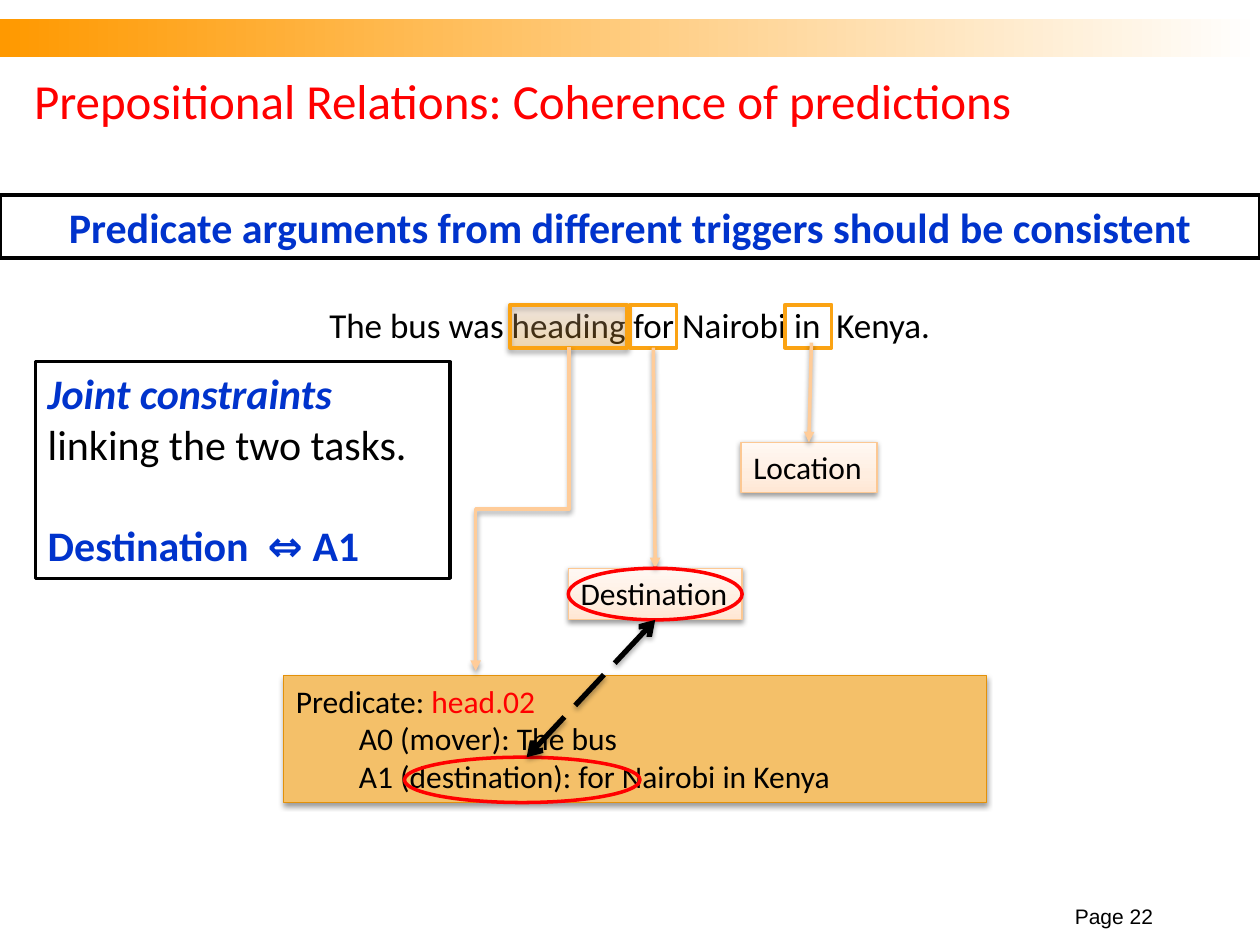
from dataclasses import dataclass
from typing import Optional

from lxml.etree import SubElement
from pptx import Presentation
from pptx.dml.color import RGBColor
from pptx.enum.dml import MSO_LINE_DASH_STYLE as Dash
from pptx.enum.shapes import MSO_CONNECTOR as Conn, MSO_SHAPE as Geo
from pptx.enum.text import MSO_ANCHOR as Anchor, PP_ALIGN as Align
from pptx.oxml.ns import qn
from pptx.util import Inches, Pt


@dataclass(frozen=True)
class Theme:
    font: str = "Calibri"
    footer_font: str = "Arial"
    black: str = "000000"
    white: str = "FFFFFF"
    red: str = "FF0000"
    blue: str = "0033CC"
    amber: str = "FBA313"
    peach: str = "FFCC99"
    role_line: str = "FCC893"
    frame_fill: str = "F4C069"
    frame_line: str = "E3910A"
    bar: tuple = ((0, "FF9900"), (100, "FFFFFF"))
    verb: tuple = ((0, "FFA40F"), (100, "FFD7BB"))
    role: tuple = ((0, "FFE7D4"), (35, "FFEEE0"), (100, "FFF8F3"))
    title: int = 28
    claim: int = 24
    sentence: int = 20
    label: int = 18
    footer: int = 12


@dataclass(frozen=True)
class Cell:
    col: float
    row: float
    cols: float
    rows: float


@dataclass(frozen=True)
class Span:
    text: str
    color: str = "000000"
    bold: bool = False
    italic: bool = False


@dataclass(frozen=True)
class Shadow:
    alpha: int
    distance: float


T = Theme()
SOFT, STRONG = Shadow(38, 1.6), Shadow(35, 1.8)
COLUMNS, ROWS = 100, 75
prs = Presentation()
prs.slide_width, prs.slide_height = Inches(10), Inches(7.5)


def x(col: float) -> int:
    return round(prs.slide_width * col / COLUMNS)


def y(row: float) -> int:
    return round(prs.slide_height * row / ROWS)


def frame(cell: Cell) -> tuple:
    return x(cell.col), y(cell.row), x(cell.cols), y(cell.rows)


def color_node(parent, color: str, alpha: int) -> None:
    node = SubElement(parent, qn("a:srgbClr"), val=color)
    if alpha < 100:
        SubElement(node, qn("a:alpha"), val=str(alpha * 1000))


def set_shadow(sp, shadow: Optional[Shadow]) -> None:
    effects = SubElement(sp._element.spPr, qn("a:effectLst"))
    if shadow:
        outer = SubElement(effects, qn("a:outerShdw"), blurRad=str(Pt(3.1)),
                           dist=str(Pt(shadow.distance)), dir="5400000", rotWithShape="0")
        color_node(outer, T.black, shadow.alpha)


def set_gradient(sp, stops: tuple, angle: int, alpha: int) -> None:
    sp.fill.gradient()
    grad = sp._element.spPr.find(qn("a:gradFill"))
    for child in list(grad):
        grad.remove(child)
    stop_list = SubElement(grad, qn("a:gsLst"))
    for position, color in stops:
        color_node(SubElement(stop_list, qn("a:gs"), pos=str(position * 1000)), color, alpha)
    SubElement(grad, qn("a:lin"), ang=str(angle * 60000), scaled="0")


def write(tf, paragraphs: list, size: int, align=Align.LEFT, anchor=Anchor.TOP,
          wrap: bool = True, font: str = T.font) -> None:
    tf.word_wrap, tf.vertical_anchor = wrap, anchor
    for i, spans in enumerate(paragraphs):
        p = tf.paragraphs[0] if i == 0 else tf.add_paragraph()
        p.alignment = align
        for span in spans:
            r = p.add_run()
            r.text = span.text
            r.font.name, r.font.size = font, Pt(size)
            r.font.bold, r.font.italic = span.bold, span.italic
            r.font.color.rgb = RGBColor.from_string(span.color)


def add_box(s, cell: Cell, geo=Geo.RECTANGLE, fill: Optional[str] = None,
            stops: tuple = (), angle: int = 270, alpha: int = 100,
            line: Optional[str] = None, width: float = 2,
            shadow: Optional[Shadow] = None):
    sp = s.shapes.add_shape(geo, *frame(cell))
    if stops:
        set_gradient(sp, stops, angle, alpha)
    elif fill:
        sp.fill.solid()
        sp.fill.fore_color.rgb = RGBColor.from_string(fill)
    else:
        sp.fill.background()
    if line:
        sp.line.color.rgb = RGBColor.from_string(line)
        sp.line.width = Pt(width)
    else:
        sp.line.fill.background()
    set_shadow(sp, shadow)
    return sp


def add_role(s, cell: Cell, name: str):
    sp = add_box(s, cell, stops=T.role, line=T.role_line, width=0.75, shadow=SOFT)
    write(sp.text_frame, [[Span(name)]], T.label, wrap=False)
    return sp


def add_arrow(s, start: tuple, end: tuple, kind=Conn.STRAIGHT, color: str = T.peach,
              width: float = 2, shadow: Shadow = SOFT, dash=None,
              ends: tuple = (("tailEnd", "triangle"),)):
    c = s.shapes.add_connector(kind, x(start[0]), y(start[1]), x(end[0]), y(end[1]))
    c.line.color.rgb = RGBColor.from_string(color)
    c.line.width = Pt(width)
    if dash:
        c.line.dash_style = dash
    ln = c._element.spPr.find(qn("a:ln"))
    for tag, style in ends:
        SubElement(ln, qn(f"a:{tag}"), type=style)
    set_shadow(c, shadow)
    return c


def add_text(s, cell: Cell, text: str, size: int, **style) -> None:
    write(s.shapes.add_textbox(*frame(cell)).text_frame, [[Span(text)]], size, **style)


def main() -> None:
    s = prs.slides.add_slide(prs.slide_layouts[5])
    title = s.shapes.title
    title.left, title.top, title.width, title.height = frame(Cell(1.7, 5, 90, 5.8))
    write(title.text_frame, [[Span("Prepositional Relations: Coherence of predictions", T.red)]],
          T.title, anchor=Anchor.MIDDLE)

    add_box(s, Cell(0, 1.5, 100, 3), stops=T.bar, angle=0)
    add_text(s, Cell(5, 23.6, 90, 4.3), "The bus was heading for Nairobi in  Kenya.",
             T.sentence, align=Align.CENTER)
    add_box(s, Cell(40.5, 24.2, 9.3, 3.4), stops=T.verb, alpha=25,
            line=T.amber, width=2.25, shadow=STRONG)
    trigger_for, _ = [add_box(s, Cell(col, 24.2, 3.7, 3.4), line=T.amber, width=2.25)
                      for col in (50, 62.3)]

    location = add_role(s, Cell(58.8, 35.1, 10.8, 4), "Location")
    add_arrow(s, (64.4, 27.2), (64.2, 35.1)).end_connect(location, 0)
    destination_cell = Cell(45.1, 45.1, 13.8, 4.1)
    destination = add_role(s, destination_cell, "Destination")
    link = add_arrow(s, (51.9, 27.6), (52, 45.1))
    link.begin_connect(trigger_for, 2)
    link.end_connect(destination, 0)

    predicate = add_box(s, Cell(22.5, 53.6, 55.8, 10.1), fill=T.frame_fill,
                        line=T.frame_line, width=0.75, shadow=SOFT)
    write(predicate.text_frame,
          [[Span("Predicate: "), Span("head.02", T.red)],
           [Span("\tA0 (mover): The bus")],
           [Span("\tA1 (destination): for Nairobi in Kenya")]], T.label)
    for cell in (Cell(32.1, 60.1, 18.7, 3.6), destination_cell):
        add_box(s, cell, Geo.OVAL, line=T.red)
    match = add_arrow(s, (52, 49.2), (41.8, 60.1), color=T.black, width=3, shadow=STRONG,
                      dash=Dash.LONG_DASH, ends=(("headEnd", "arrow"), ("tailEnd", "arrow")))
    match.begin_connect(destination, 2)

    claim = add_box(s, Cell(0, 15.5, 100, 5), fill=T.white, line=T.black)
    write(claim.text_frame,
          [[Span("Predicate arguments from different triggers should be consistent",
                 T.blue, bold=True)]], T.claim, align=Align.CENTER)
    elbow = add_arrow(s, (28.6, 36.7), (54.3, 44.1), kind=Conn.ELBOW)
    elbow._element.spPr.find(qn("a:xfrm")).set("rot", str(90 * 60000))

    joint = add_box(s, Cell(2.8, 28.7, 32.9, 17.2), fill=T.white, line=T.black)
    write(joint.text_frame,
          [[Span("Joint constraints ", T.blue, bold=True, italic=True),
            Span("linking the two tasks.")],
           [Span("Destination  ⇔ A1", T.blue, bold=True)]], T.claim)
    joint.text_frame.paragraphs[1].space_before = Pt(T.claim * 1.2)

    add_text(s, Cell(82.5, 71.7, 10, 2.5), "Page 22", T.footer, align=Align.RIGHT,
             anchor=Anchor.BOTTOM, font=T.footer_font)
    prs.save("out.pptx")


if __name__ == "__main__":
    main()
